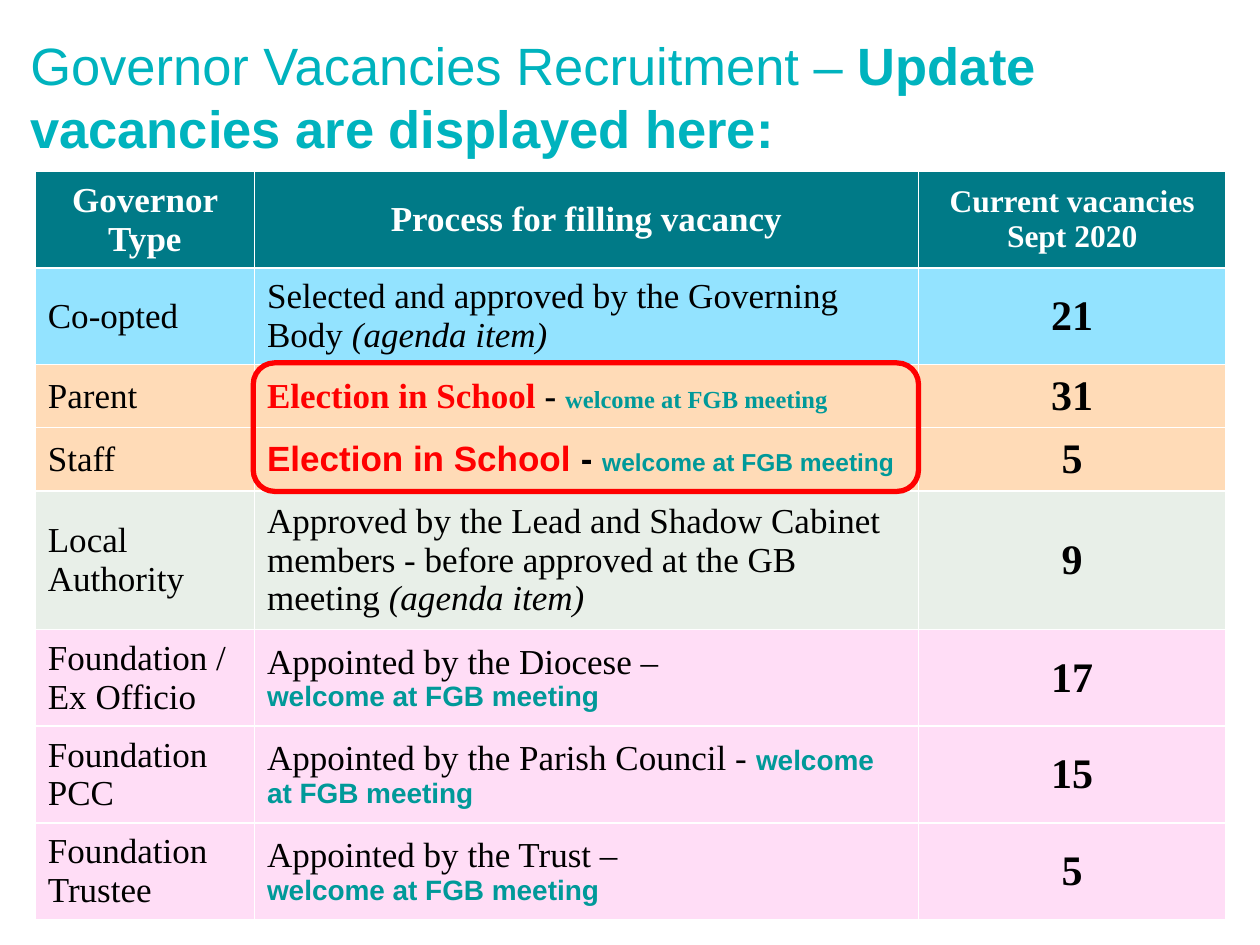
from dataclasses import dataclass, field

from pptx import Presentation
from pptx import util as u
from pptx.dml.color import RGBColor
from pptx.enum import shapes, text

SANS, SERIF = "Arial", "Times New Roman"


@dataclass
class Theme:
    white: str = "FFFFFF"
    red: str = "FF0000"
    head: str = "007A87"
    blue: str = "93E3FF"
    peach: str = "FFDBB7"
    sage: str = "E8EFE8"
    pink: str = "FFDDF6"
    # style: font, size, colour, bold, italic
    styles: dict = field(default_factory=lambda: {
        "title": (SANS, 30, "00B3BE", False, False),
        "strong": (SANS, 30, "00B3BE", True, False),
        "page": (SANS, 12, "B2B2B2", False, False),
        "head": (SERIF, 20, "FFFFFF", True, False),
        "small": (SERIF, 18, "FFFFFF", True, False),
        "body": (SERIF, 20, "000000", False, False),
        "ital": (SERIF, 20, "000000", False, True),
        "count": (SERIF, 24, "000000", True, False),
        "vote": (SERIF, 20, "FF0000", True, False),
        "dash": (SERIF, 20, "000000", True, False),
        "note": (SERIF, 14, "009999", True, False),
        "vote2": (SANS, 20, "FF0000", True, False),
        "dash2": (SANS, 20, "000000", True, False),
        "note2": (SANS, 14, "009999", True, False),
        "greet": (SANS, 16, "009999", True, False),
    })


theme = Theme()


def write(frame, paras, align, **form):
    """Fill a text frame with paragraphs, each a list of (words, style) runs."""
    for name, value in form.items():
        setattr(frame, name, value)
    for i, runs in enumerate(paras):
        para = frame.add_paragraph() if i else frame.paragraphs[0]
        para.alignment = align
        for words, style in runs:
            run = para.add_run()
            run.text = words
            face, size, color, bold, ital = theme.styles[style]
            look = {"name": face, "size": u.Pt(size), "bold": bold, "italic": ital}
            for name, value in look.items():
                setattr(run.font, name, value)
            run.font.color.rgb = RGBColor.from_string(color)


def paint(fill, color):
    fill.solid()
    fill.fore_color.rgb = RGBColor.from_string(color)


LEFT, MID, RIGHT = text.PP_ALIGN.LEFT, text.PP_ALIGN.CENTER, text.PP_ALIGN.RIGHT
ANCHOR = text.MSO_ANCHOR

deck = Presentation()
deck.slide_width, deck.slide_height = u.Inches(10), u.Inches(7.5)
slide = deck.slides.add_slide(deck.slide_layouts[5])

# Title
title = slide.shapes.title
place = {"left": 0.14, "top": 0.21, "width": 9.72, "height": 0.99}
for name, value in place.items():
    setattr(title, name, u.Inches(value))
paint(title.fill, theme.white)
write(title.text_frame,
      [[("Governor Vacancies Recruitment – ", "title"),
        ("Update vacancies are displayed here:", "strong")]],
      LEFT, word_wrap=True, auto_size=text.MSO_AUTO_SIZE.NONE,
      vertical_anchor=ANCHOR.TOP)
title.text_frame.paragraphs[0].line_spacing = u.Pt(36)

# Page number
page = slide.shapes.add_textbox(*map(u.Inches, (7.83, 6.92, 1.92, 0.3)))
write(page.text_frame, [[("43", "page")]], RIGHT, word_wrap=True)

# Vacancies table
agenda = ("(agenda item)", "ital")
hello = "welcome at FGB meeting"
greet = (hello, "greet")
vote = "Election in School"
# height, fill, governor type, process paragraphs, vacancies
rows = [
    (0.75, theme.blue, "Co-opted",
     [[("Selected and approved by the Governing Body ", "body"), agenda]], 21),
    (0.48, theme.peach, "Parent",
     [[(vote, "vote"), (" - ", "dash"), (hello, "note")]], 31),
    (0.48, theme.peach, "Staff",
     [[(vote, "vote2"), (" - ", "dash2"), (hello, "note2")]], 5),
    (1.06, theme.sage, "Local Authority",
     [[("Approved by the Lead and Shadow Cabinet members - before approved "
        "at the GB meeting ", "body"), agenda]], 9),
    (0.52, theme.pink, "Foundation / Ex Officio",
     [[("Appointed by the Diocese –", "body")], [greet]], 17),
    (0.45, theme.pink, "Foundation PCC",
     [[("Appointed by the Parish Council - ", "body"), greet]], 15),
    (0.69, theme.pink, "Foundation Trustee",
     [[("Appointed by the Trust –", "body")], [greet]], 5),
]
heads = [("Governor Type", "head"), ("Process for filling vacancy", "head"),
         ("Current vacancies Sept 2020", "small")]
lines = [(0.74, theme.head, [([[head]], MID) for head in heads])]
for high, color, kind, steps, count in rows:
    lines.append((high, color, [([[(kind, "body")]], LEFT), (steps, LEFT),
                                ([[(str(count), "count")]], MID)]))

table = slide.shapes.add_table(
    len(lines), len(heads), *map(u.Inches, (0.28, 1.36, 9.45, 5.17))).table
table.horz_banding = False
for col, wide in zip(table.columns, (1.74, 5.27, 2.44)):
    col.width = u.Inches(wide)
for row, (high, color, cells) in zip(table.rows, lines):
    row.height = u.Inches(high)
    for cell, (paras, align) in zip(row.cells, cells):
        paint(cell.fill, color)
        cell.vertical_anchor = ANCHOR.MIDDLE
        write(cell.text_frame, paras, align)

# Outline round the two elected types
ring = slide.shapes.add_shape(shapes.MSO_SHAPE.ROUNDED_RECTANGLE,
                              *map(u.Inches, (2.01, 2.88, 5.28, 1.02)))
ring.shadow.inherit = False
ring.fill.background()
ring.line.color.rgb = RGBColor.from_string(theme.red)
ring.line.width = u.Pt(3)

deck.save("out.pptx")
